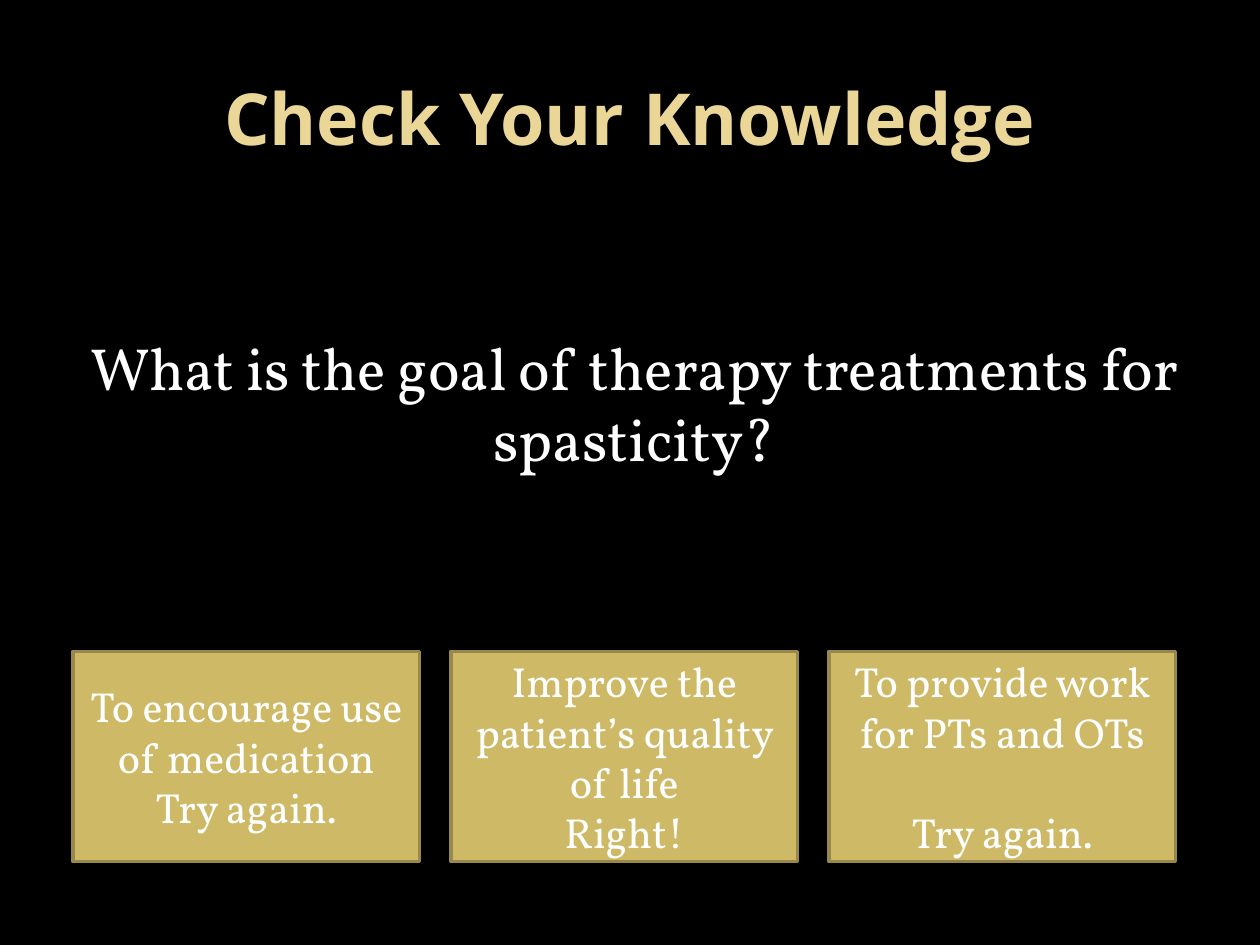
from pptx import Presentation
from pptx.dml.color import RGBColor
from pptx.enum.shapes import MSO_SHAPE
from pptx.enum.text import MSO_ANCHOR, MSO_AUTO_SIZE, PP_ALIGN
from pptx.util import Cm, Pt

BLACK = RGBColor(0x00, 0x00, 0x00)
WHITE = RGBColor(0xFF, 0xFF, 0xFF)
CREAM = RGBColor(0xEA, 0xD6, 0x96)
GOLD = RGBColor(0xCE, 0xB9, 0x66)
BRONZE = RGBColor(0x98, 0x89, 0x4B)

TITLE = "Check Your Knowledge"
QUESTION = "What is the goal of therapy treatments for spasticity?"
# answer, reply, space above the reply in points
ANSWERS = [
    ("To encourage use of medication", "Try again.", 0),
    ("Improve the patient’s quality of life", "Right!", 0),
    ("To provide work for PTs and OTs", "Try again.", 28.8),
]

TITLE_FONT = {"name": "Open Sans", "size": Pt(41), "bold": True}
ASK_FONT = {"name": "Vollkorn", "size": Pt(34)}
CARD_FONT = {"name": "Vollkorn", "size": Pt(24)}

LEFT, TOP, WIDE, HIGH, STEP = 1.47, 13.13, 6.99, 4.24, 7.62


def write(shape, lines, font, color, anchor):
    """Fill a shape with centred lines, given as (text, space above)."""
    frame = shape.text_frame
    frame.word_wrap = True
    frame.auto_size = MSO_AUTO_SIZE.NONE
    frame.vertical_anchor = anchor
    for i, (text, space) in enumerate(lines):
        para = frame.add_paragraph() if i else frame.paragraphs[0]
        para.alignment = PP_ALIGN.CENTER
        para.space_before = Pt(space)
        run = para.add_run()
        run.text = text
        for key, value in font.items():
            setattr(run.font, key, value)
        run.font.color.rgb = color


def main():
    deck = Presentation()
    deck.slide_width, deck.slide_height = Cm(25.4), Cm(19.05)
    slide = deck.slides.add_slide(deck.slide_layouts[5])
    back = slide.background.fill
    back.solid()
    back.fore_color.rgb = BLACK

    title = slide.shapes.title
    place = {"left": 1.27, "top": 0.76, "width": 22.86, "height": 3.18}
    for key, value in place.items():
        setattr(title, key, Cm(value))
    write(title, [(TITLE, 0)], TITLE_FONT, CREAM, MSO_ANCHOR.MIDDLE)

    ask = slide.shapes.add_textbox(Cm(1.17), Cm(6.55), Cm(22.86), Cm(3.38))
    write(ask, [(QUESTION, 6.8)], ASK_FONT, WHITE, MSO_ANCHOR.TOP)
    indent = ask.text_frame.paragraphs[0]._p.get_or_add_pPr()
    indent.set("marL", str(Cm(0.38)))

    for i, (answer, reply, space) in enumerate(ANSWERS):
        card = slide.shapes.add_shape(
            MSO_SHAPE.RECTANGLE, Cm(LEFT + i * STEP), Cm(TOP), Cm(WIDE), Cm(HIGH))
        card.shadow.inherit = False
        card.fill.solid()
        card.fill.fore_color.rgb = GOLD
        card.line.color.rgb = BRONZE
        card.line.width = Pt(2)
        write(card, [(answer, 0), (reply, space)], CARD_FONT, WHITE, MSO_ANCHOR.MIDDLE)

    deck.save("out.pptx")


if __name__ == "__main__":
    main()
